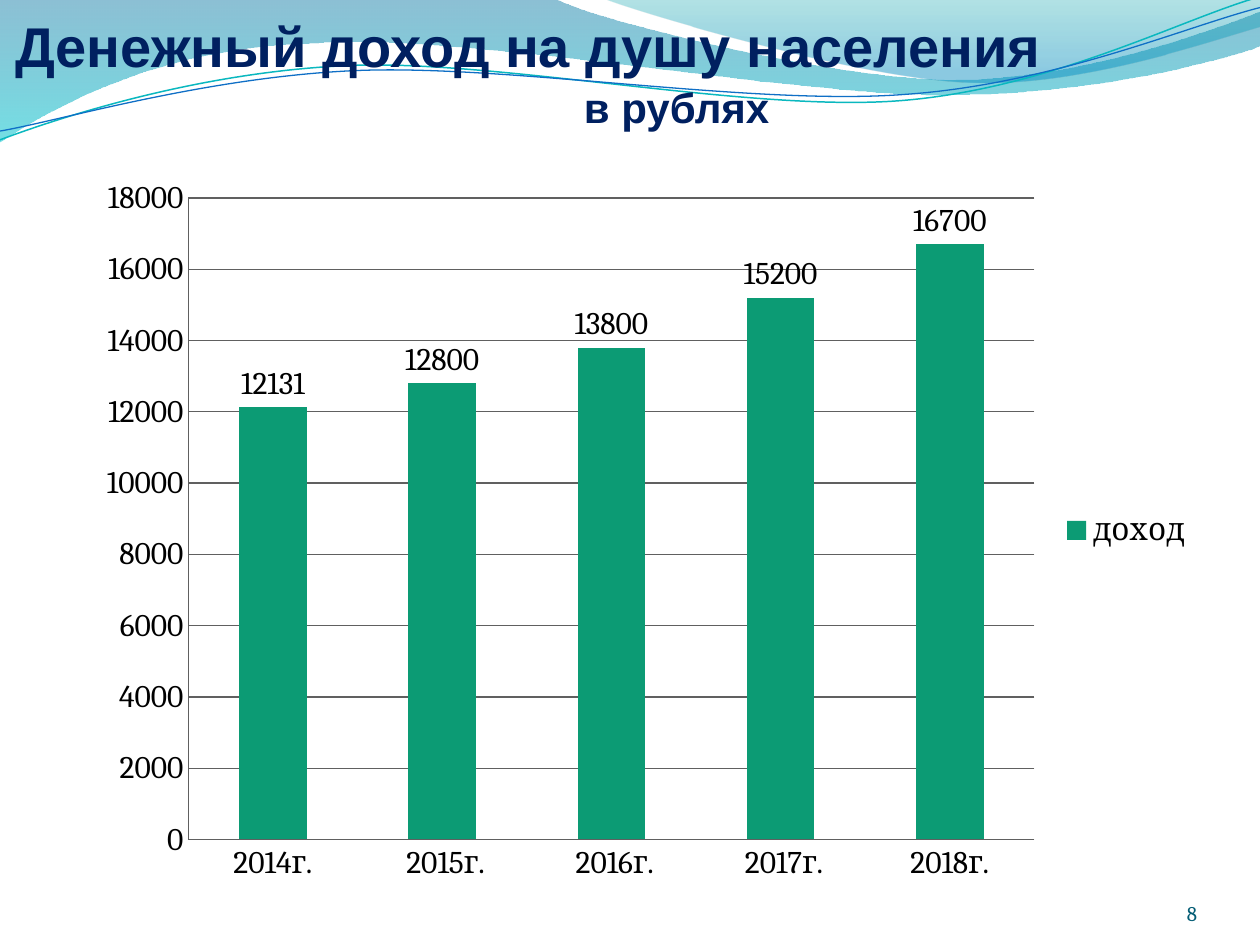
from dataclasses import dataclass
from math import cos, radians, sin
from typing import Optional

from lxml import etree
from pptx import Presentation
from pptx.chart.data import CategoryChartData
from pptx.dml.color import RGBColor
from pptx.enum.chart import XL_CHART_TYPE, XL_LABEL_POSITION, XL_LEGEND_POSITION, XL_TICK_MARK
from pptx.enum.text import MSO_ANCHOR, MSO_AUTO_SIZE, PP_ALIGN
from pptx.oxml.ns import qn
from pptx.util import Inches, Pt

COLUMN = XL_CHART_TYPE.COLUMN_CLUSTERED
OUTSIDE = XL_LABEL_POSITION.OUTSIDE_END
LEGEND_RIGHT = XL_LEGEND_POSITION.RIGHT
NO_TICK = XL_TICK_MARK.NONE
TOP, BOTTOM = MSO_ANCHOR.TOP, MSO_ANCHOR.BOTTOM
LEFT, CENTER, RIGHT = PP_ALIGN.LEFT, PP_ALIGN.CENTER, PP_ALIGN.RIGHT
NO_AUTOFIT = MSO_AUTO_SIZE.NONE

COLORS = {
    "title": "002060", "text": "000000", "bar": "0C9B74", "grid": "606060",
    "number": "045D75", "teal_line": "0AB8BF", "blue_line": "0F6FC6",
    "deep_blue": "0074A1", "aqua": "00C6CF", "teal": "00A1A9", "sky": "008BBF",
}
TILT = 2.7


@dataclass
class Stop:
    position: float
    color: str
    opacity: int


@dataclass
class Wave:
    segments: list
    stops: Optional[list[Stop]] = None
    line: Optional[str] = None
    width: float = 0
    center: Optional[tuple] = None


WAVES = [
    Wave([(0, 0), (4.4, -0.01),
          (4.76, 0.17, 6.64, 0.63, 7.58, 0.63), (8.53, 0.63, 9.58, 0.26, 10, 0.09),
          (10.01, 0.36),
          (9.83, 0.44, 8.7, 0.76, 7.46, 0.75), (6.22, 0.75, 3.82, 0.28, 2.57, 0.34),
          (1.29, 0.36, 0.46, 0.83, -0.01, 1.13), (0, 0)],
         stops=[Stop(0, "deep_blue", 45), Stop(1, "aqua", 55)]),
    Wave([(4.79, -0.01), (5.09, 0.11, 6.82, 0.62, 7.69, 0.65),
          (8.56, 0.69, 9.61, 0.32, 10, 0.21), (10, 0), (4.79, -0.01)],
         stops=[Stop(0, "teal", 30), Stop(0.8, "sky", 45)]),
    Wave([(0, 1.11), (0.48, 0.93, 1.58, 0.57, 2.77, 0.52),
          (3.95, 0.47, 5.93, 0.89, 7.13, 0.8), (8.33, 0.71, 9.38, 0.15, 9.98, -0.02)],
         line="teal_line", width=0.85, center=(4.99, 0.575)),
    Wave([(0, 1.04), (0.47, 0.96, 1.64, 0.61, 2.83, 0.56),
          (4.03, 0.51, 5.97, 0.84, 7.17, 0.75), (8.36, 0.67, 9.41, 0.21, 10, 0.06)],
         line="blue_line", width=0.75, center=(4.995, 0.59)),
]


def rgb(name: str) -> RGBColor:
    return RGBColor.from_string(COLORS[name])


def level(point: tuple, center: tuple) -> tuple:
    dx, dy = point[0] - center[0], point[1] - center[1]
    c, n = cos(radians(TILT)), sin(radians(TILT))
    return center[0] + dx * c - dy * n, center[1] + dx * n + dy * c


def bend(sp, segments: list) -> None:
    lines = list(sp._element.iter(qn("a:lnTo")))
    for segment in segments[1:]:
        group = [lines.pop(0) for _ in range(len(segment) // 2)]
        if len(group) == 3:
            curve = etree.Element(qn("a:cubicBezTo"))
            group[0].addprevious(curve)
            for line in group:
                curve.append(line[0])
                line.getparent().remove(line)


def add_wave(s, wave: Wave) -> None:
    points = [seg[i:i + 2] for seg in wave.segments for i in range(0, len(seg), 2)]
    if wave.center:
        points = [level(point, wave.center) for point in points]
    points = [(Inches(x), Inches(y)) for x, y in points]
    builder = s.shapes.build_freeform(*points[0])
    builder.add_line_segments(points[1:], close=wave.stops is not None)
    sp = builder.convert_to_shape()
    bend(sp, wave.segments)
    sp.shadow.inherit = False
    if wave.stops is None:
        sp.rotation = 360 - TILT
        sp.fill.background()
        sp.line.color.rgb = rgb(wave.line)
        sp.line.width = Pt(wave.width)
        return
    sp.line.fill.background()
    sp.fill.gradient()
    sp.fill.gradient_angle = 270
    for target, stop in zip(sp.fill.gradient_stops, wave.stops):
        target.position = stop.position
        target.color.rgb = rgb(stop.color)
    for color, stop in zip(sp._element.spPr.iter(qn("a:srgbClr")), wave.stops):
        etree.SubElement(color, qn("a:alpha")).set("val", str(stop.opacity * 1000))


def add_run(p, text: str, font: str, size: float, color: str, bold: bool = False) -> None:
    r = p.add_run()
    r.text = text
    r.font.name = font
    r.font.size = Pt(size)
    r.font.bold = bold
    r.font.color.rgb = rgb(color)


def format_title_line(p, text: str, size: float, align, indent: float, spacing: float) -> None:
    p.alignment = align
    p.line_spacing = Pt(spacing)
    p.space_before = Pt(0)
    p._p.get_or_add_pPr().set("marL", str(Inches(indent)))
    add_run(p, text, "Arial", size, "title", True)


def format_title(s) -> None:
    sp = s.shapes.title
    s.shapes._spTree.append(sp._element)
    sp.left, sp.top, sp.width, sp.height = Inches(0), Inches(0.13), Inches(10), Inches(1)
    tf = sp.text_frame
    tf.auto_size = NO_AUTOFIT
    tf.vertical_anchor = TOP
    format_title_line(tf.paragraphs[0], "Денежный доход на душу населения", 32, LEFT, 0.02, 32)
    format_title_line(tf.add_paragraph(), "в рублях", 24, CENTER, 0.74, 30.5)


def add_income_chart(s) -> None:
    data = CategoryChartData(number_format="General")
    data.categories = ["2014г.", " 2015г.", " 2016г.", " 2017г.", "2018г."]
    data.add_series("доход", [12131, 12800, 13800, 15200, 16700])
    chart = s.shapes.add_chart(
        COLUMN, Inches(0.67), Inches(1.31), Inches(8.9), Inches(5.8), data).chart
    chart.has_title = False
    chart.font.name = "Cambria"
    chart.font.size = Pt(18)
    chart.font.color.rgb = rgb("text")
    chart.has_legend = True
    chart.legend.position = LEGEND_RIGHT
    chart.legend.include_in_layout = False

    values = chart.value_axis
    values.has_major_gridlines = True
    for axis in (chart.category_axis, values):
        axis.major_tick_mark = axis.minor_tick_mark = NO_TICK
    for part in (chart.category_axis, values, values.major_gridlines):
        part.format.line.color.rgb = rgb("grid")
        part.format.line.width = Pt(0.75)

    plot = chart.plots[0]
    plot.gap_width = 150
    plot.vary_by_categories = False
    plot.has_data_labels = True
    plot.data_labels.show_value = True
    plot.data_labels.position = OUTSIDE
    fill = plot.series[0].format.fill
    fill.solid()
    fill.fore_color.rgb = rgb("bar")


def add_page_number(s, number: str) -> None:
    tf = s.shapes.add_textbox(Inches(8.67), Inches(6.95), Inches(0.83), Inches(0.4)).text_frame
    tf.word_wrap = True
    tf.vertical_anchor = BOTTOM
    tf.margin_left = tf.margin_right = tf.margin_top = tf.margin_bottom = 0
    p = tf.paragraphs[0]
    p.alignment = RIGHT
    add_run(p, number, "Cambria", 12, "number")


def main() -> None:
    prs = Presentation()
    prs.slide_width, prs.slide_height = Inches(10), Inches(7.5)
    s = prs.slides.add_slide(prs.slide_layouts[5])
    for wave in WAVES:
        add_wave(s, wave)
    format_title(s)
    add_income_chart(s)
    add_page_number(s, "8")
    prs.save("out.pptx")


if __name__ == "__main__":
    main()
